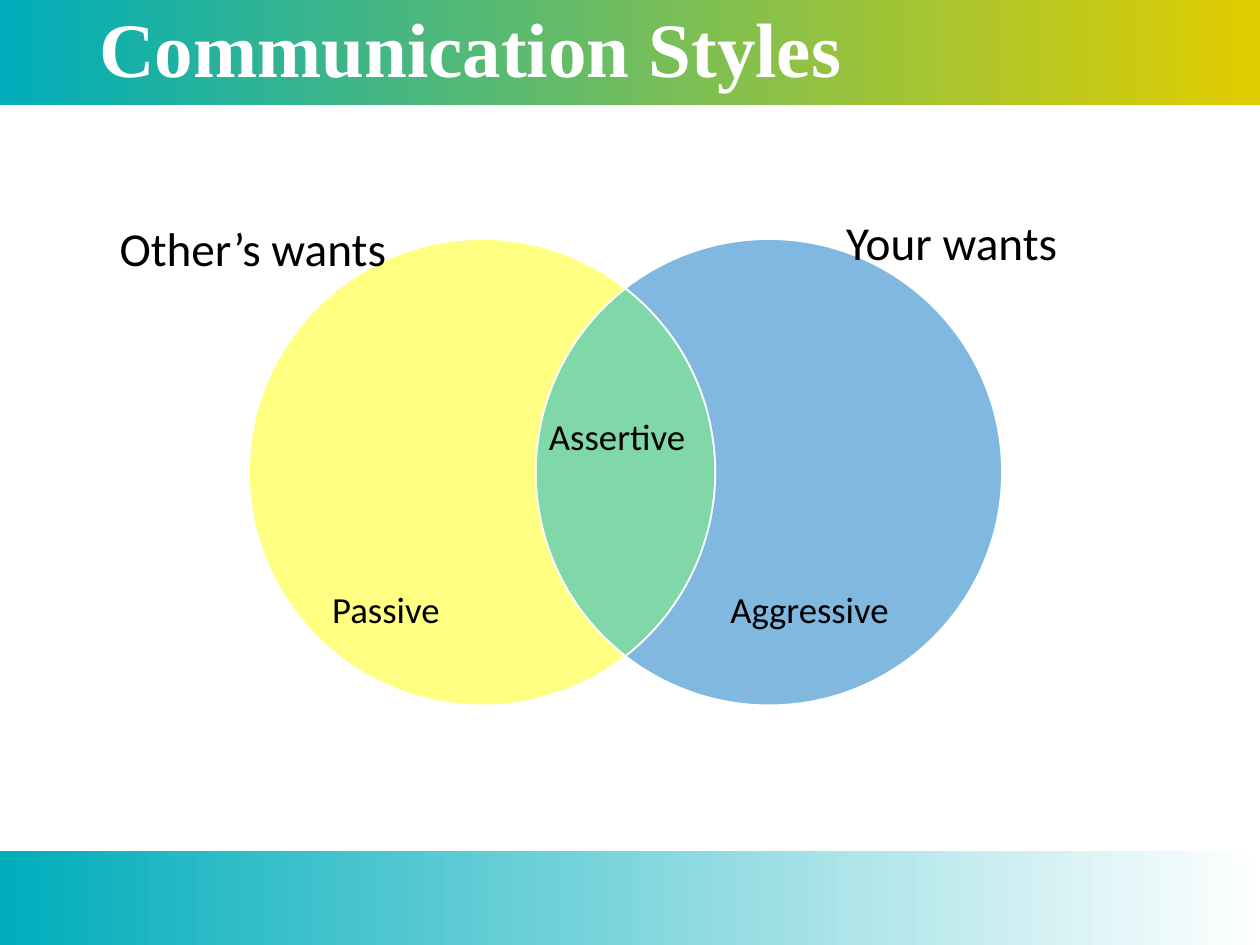
from math import acos, cos, degrees, radians, sin, tan

from lxml.etree import SubElement
from pptx import Presentation
from pptx.dml.color import RGBColor
from pptx.enum.shapes import MSO_SHAPE as SHAPE
from pptx.enum.text import MSO_ANCHOR as ANCHOR, MSO_AUTO_SIZE as AUTO, PP_ALIGN as ALIGN
from pptx.oxml.ns import qn
from pptx.util import Cm, Pt

# Content, lengths in cm
TITLE = "Communication Styles"
BARS = [  # top, height, start and end colour
    (0, 2.11, "00ADBB", "E1CD00"),
    (17.15, 1.9, "00ADBB", "FFFFFF"),
]
LABELS = [  # text, left, top, width
    ("Other’s wants", 2.16, 4.29, 6.65),
    ("Your wants", 16.81, 4.16, 6.05),
]
LEFT, RIGHT, MID, RADIUS = 9.72, 15.5, 9.52, 4.7  # the two circles
HALF = degrees(acos((RIGHT - LEFT) / 2 / RADIUS))  # half angle of the overlap
REGIONS = [  # text, fill, anchor, insets, arcs (centre, angles passed)
    ("Assertive", "80D8A8", ANCHOR.MIDDLE, (0, 0, 0.34, 1.35),
     [(LEFT, (-HALF, 0, HALF)), (RIGHT, (180 - HALF, 180, 180 + HALF))]),
    ("Aggressive", "81B8DF", ANCHOR.BOTTOM, (0, 0, 0.17, 1.5),
     [(RIGHT, (180 + HALF, 270, 360, 450, 540 - HALF)), (LEFT, (HALF, 0, -HALF))]),
    ("Passive", "FFFF81", ANCHOR.BOTTOM, (0, 1.52, 2.07, 1.5),
     [(LEFT, (HALF, 90, 180, 270, 360 - HALF)), (RIGHT, (180 + HALF, 180, 180 - HALF))]),
]


def color(code):
    return RGBColor.from_string(code)


def write(shape, text, size, font="Calibri", ink="000000", bold=False, align=ALIGN.LEFT,
          anchor=ANCHOR.TOP, insets=(0.25, 0.13, 0.25, 0.13), lead=1.0):
    frame = shape.text_frame
    frame.word_wrap = True
    frame.auto_size = AUTO.NONE
    frame.vertical_anchor = anchor
    (frame.margin_left, frame.margin_top,
     frame.margin_right, frame.margin_bottom) = map(Cm, insets)
    para = frame.paragraphs[0]
    para.alignment, para.line_spacing = align, lead
    run = para.add_run()
    run.text = text
    run.font.name, run.font.size, run.font.bold = font, Pt(size), bold
    run.font.color.rgb = color(ink)


def spot(mid, angle, pull=0):
    """Point of a circle, moved along its tangent by pull radii."""
    turn = radians(angle)
    return (Cm(mid + RADIUS * (cos(turn) - pull * sin(turn))),
            Cm(MID + RADIUS * (sin(turn) + pull * cos(turn))))


def curves(mid, angles):
    """Two control points and an end point for each step between angles."""
    points = []
    for start, end in zip(angles, angles[1:]):
        pull = 4 / 3 * tan(radians(end - start) / 4)
        points += [spot(mid, start, pull), spot(mid, end, -pull), spot(mid, end)]
    return points


def outline(shapes, arcs):
    """Freeform whose line segments are joined in threes into curves."""
    mid, angles = arcs[0]
    pen = shapes.build_freeform(*spot(mid, angles[0]))
    pen.add_line_segments([p for part in arcs for p in curves(*part)], close=True)
    shape = pen.convert_to_shape()
    lines = list(shape.element.iter(qn("a:lnTo")))
    for i in range(0, len(lines) // 3 * 3, 3):
        trio = lines[i:i + 3]
        curve = SubElement(trio[0].getparent(), qn("a:cubicBezTo"))
        trio[0].addprevious(curve)
        for line in trio:
            curve.append(line[0])
            line.getparent().remove(line)
    return shape


deck = Presentation()
deck.slide_width, deck.slide_height = Cm(25.4), Cm(19.05)
slide = deck.slides.add_slide(deck.slide_layouts[5])
shapes = slide.shapes

# Gradient bars
for top, height, first, last in BARS:
    bar = shapes.add_shape(SHAPE.RECTANGLE, 0, Cm(top), deck.slide_width, Cm(height))
    bar.shadow.inherit = False
    bar.line.fill.background()
    bar.fill.gradient()
    bar.fill.gradient_angle = 0
    for stop, code in zip(bar.fill.gradient_stops, (first, last)):
        stop.color.rgb = color(code)

# Title, raised above the bars
title = shapes.title
title.left, title.top, title.width, title.height = Cm(1.75), Cm(0), Cm(21.9), Cm(2.1)
write(title, TITLE, 44, font="Times New Roman", ink="FFFFFF", bold=True,
      anchor=ANCHOR.MIDDLE, lead=0.9)
title.element.getparent().append(title.element)

# Overlapping circles
for text, fill, anchor, insets, arcs in REGIONS:
    region = outline(shapes, arcs)
    region.shadow.inherit = False
    region.fill.solid()
    region.fill.fore_color.rgb = color(fill)
    region.line.color.rgb = color("FFFFFF")
    region.line.width = Pt(1)
    write(region, text, 21, align=ALIGN.CENTER, anchor=anchor, insets=insets, lead=0.9)

# Labels of the circles
for text, left, top, width in LABELS:
    box = shapes.add_textbox(Cm(left), Cm(top), Cm(width), Cm(1.42))
    write(box, text, 27)

deck.save("out.pptx")
